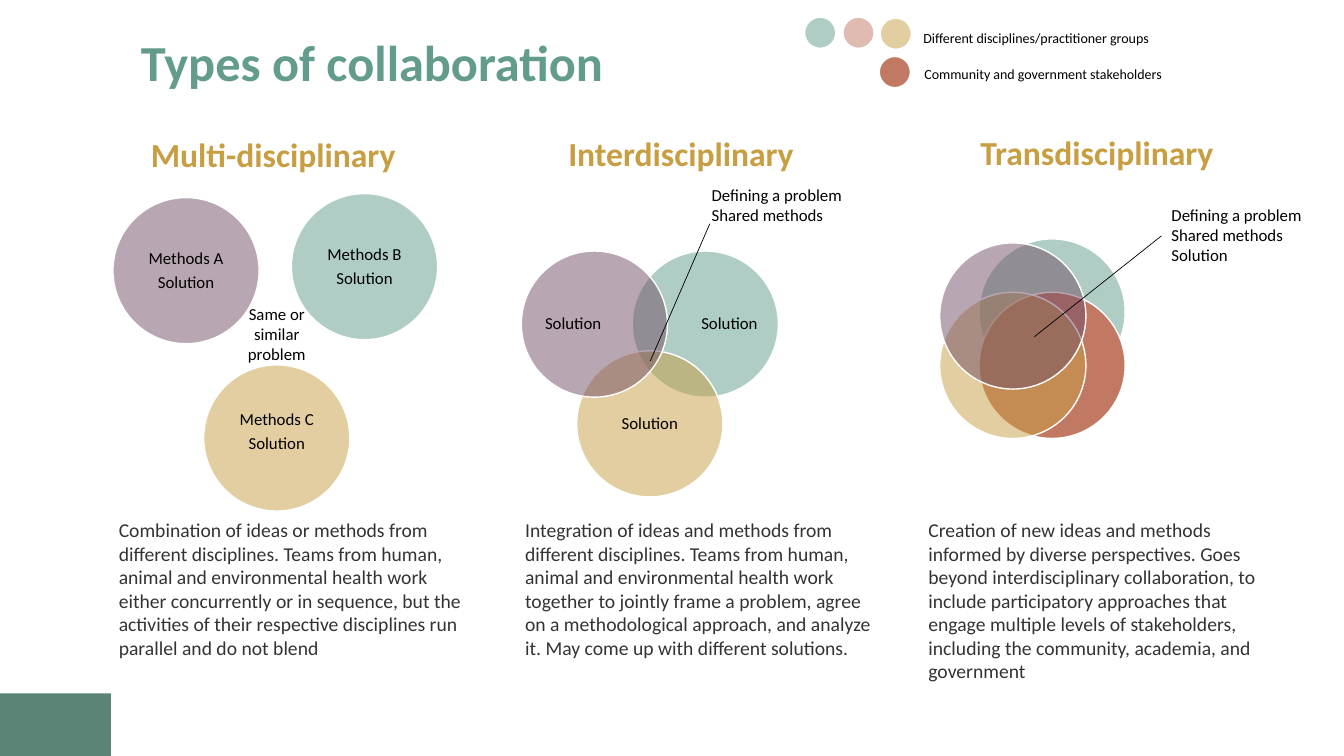
import pptx
import pptx.util
import pptx.dml.color
import pptx.enum.shapes
import pptx.enum.text
import pptx.oxml
import pptx.oxml.ns

Inches, Pt = pptx.util.Inches, pptx.util.Pt
SHAPE = pptx.enum.shapes.MSO_SHAPE
ANCHOR = pptx.enum.text.MSO_ANCHOR
ALIGN = pptx.enum.text.PP_ALIGN

FONT = "Calibri"
GREEN, GOLD, PURPLE, RUST = "639C8C", "C79E42", "724E66", "C27964"
BLACK, WHITE, GREY, CORNER = "000000", "FFFFFF", "333333", "5B8477"
DISC, DOT = 1.45, 0.31
BODY_TOP, BODY_WIDTH = 5.09, 3.74
EVEN = (0.08, 0.08, 0.08, 0.08)

TITLE = "Types of collaboration"

COLUMNS = [
    {
        "heading": ("Multi-disciplinary", 1.1, 0.88, 3.22),
        "discs": [
            (2.89, 1.92, GREEN, 50, ["Methods B", "Solution"], EVEN),
            (2.02, 3.62, GOLD, 50, ["Methods C", "Solution"], (0.08, 0.08, 0.08, 0.2)),
            (1.12, 1.96, PURPLE, 50, ["Methods A", "Solution"], EVEN),
        ],
        "note": (["Same or similar problem"], 2.17, 2.96, 1.15, 0.71, ALIGN.CENTER),
        "pointer": None,
        "body": (1.08, 1.51, "Combination of ideas or methods from different disciplines. "
                 "Teams from human, animal and environmental health work either concurrently "
                 "or in sequence, but the activities of their respective disciplines run "
                 "parallel and do not blend"),
    },
    {
        "heading": ("Interdisciplinary", 5.37, 0.87, 2.77),
        "discs": [
            (6.27, 2.49, GREEN, 50, ["Solution"], (0.48, 0, 0, 0)),
            (5.72, 3.48, GOLD, 50, ["Solution"], EVEN),
            (5.17, 2.49, PURPLE, 50, ["Solution"], (0, 0, 0.42, 0)),
        ],
        "note": (["Defining a problem", "Shared methods"], 6.96, 1.78, 1.51, 0.5, ALIGN.LEFT),
        "pointer": (6.45, 3.58, 7.04, 2.22),
        "body": (5.11, 1.51, "Integration of ideas and methods from different disciplines. "
                 "Teams from human, animal and environmental health work together to jointly "
                 "frame a problem, agree on a methodological approach, and analyze it. May "
                 "come up with different solutions."),
    },
    {
        "heading": ("Transdisciplinary", 8.68, 0.86, 4.4),
        "discs": [
            (9.71, 2.37, GREEN, 50, [], EVEN),
            (9.71, 2.9, RUST, 100, [], EVEN),
            (9.32, 2.9, GOLD, 50, [], EVEN),
            (9.32, 2.41, PURPLE, 50, [], EVEN),
        ],
        "note": (["Defining a problem", "Shared methods", "Solution"],
                 11.52, 1.98, 1.51, 0.71, ALIGN.LEFT),
        "pointer": (10.26, 3.34, 11.52, 2.34),
        "body": (9.11, 1.75, "Creation of new ideas and methods informed by diverse "
                 "perspectives. Goes beyond interdisciplinary collaboration, to include "
                 "participatory approaches that engage multiple levels of stakeholders, "
                 "including the community, academia, and government"),
    },
]

LEGEND_DOTS = [
    (7.98, 0.17, GREEN, 50),
    (8.36, 0.17, RUST, 50),
    (8.73, 0.18, GOLD, 50),
    (8.72, 0.56, RUST, 100),
]
LEGEND_LABELS = [
    ("Different disciplines/practitioner groups", 9.06, 0.24, 2.48),
    ("Community and government stakeholders", 9.07, 0.6, 2.6),
]

deck = pptx.Presentation()
deck.slide_width, deck.slide_height = Inches(13.33), Inches(7.5)
slide = deck.slides.add_slide(deck.slide_layouts[6])


def paint(color_format, hex_color):
    color_format.rgb = pptx.dml.color.RGBColor.from_string(hex_color)


def write(frame, lines, size, color, align=ALIGN.LEFT, bold=False, spacing=1.0, after=0):
    for index, line in enumerate(lines):
        paragraph = frame.paragraphs[0] if index == 0 else frame.add_paragraph()
        paragraph.text = line
        paragraph.alignment = align
        paragraph.line_spacing = spacing
        paragraph.space_after = Pt(after)
        paragraph.font.name = FONT
        paragraph.font.size = Pt(size)
        paragraph.font.bold = bold
        paint(paragraph.font.color, color)


def add_label(lines, left, top, width, height, size, color,
              anchor=ANCHOR.TOP, wrap=True, **style):
    frame = slide.shapes.add_textbox(
        Inches(left), Inches(top), Inches(width), Inches(height)).text_frame
    frame.word_wrap = wrap
    frame.vertical_anchor = anchor
    write(frame, lines, size, color, **style)


def add_filled(kind, left, top, width, height, color, opacity=100):
    shape = slide.shapes.add_shape(
        kind, Inches(left), Inches(top), Inches(width), Inches(height))
    shape.shadow.inherit = False
    shape.fill.solid()
    paint(shape.fill.fore_color, color)
    if opacity < 100:
        fill_color = shape.fill._xPr.find(".//" + pptx.oxml.ns.qn("a:srgbClr"))
        alpha = pptx.oxml.parse_xml(
            f'<a:alpha {pptx.oxml.ns.nsdecls("a")} val="{opacity * 1000}"/>')
        fill_color.append(alpha)
    return shape


def add_disc(left, top, size, color, opacity, lines=(), insets=EVEN):
    disc = add_filled(SHAPE.OVAL, left, top, size, size, color, opacity)
    paint(disc.line.color, WHITE)
    disc.line.width = Pt(1)
    if lines:
        frame = disc.text_frame
        frame.word_wrap = False
        frame.vertical_anchor = ANCHOR.MIDDLE
        (frame.margin_left, frame.margin_top,
         frame.margin_right, frame.margin_bottom) = map(Inches, insets)
        write(frame, lines, 12, BLACK, ALIGN.CENTER, spacing=0.9, after=4.2)


def add_pointer(*ends):
    pointer = slide.shapes.add_connector(
        pptx.enum.shapes.MSO_CONNECTOR.STRAIGHT, *map(Inches, ends))
    paint(pointer.line.color, BLACK)
    pointer.line.width = Pt(0.5)
    pointer._element.spPr.append(
        pptx.oxml.parse_xml(f'<a:effectLst {pptx.oxml.ns.nsdecls("a")}/>'))


corner = add_filled(SHAPE.RECTANGLE, 0, 6.88, 1.1, 0.62, CORNER)
corner.line.fill.background()
add_label([TITLE], 1.3, 0.29, 11.11, 0.71, 36, GREEN,
          anchor=ANCHOR.MIDDLE, bold=True, spacing=0.9)

for column in COLUMNS:
    heading, left, top, width = column["heading"]
    add_label([heading], left, top, width, 0.9, 24, GOLD,
              anchor=ANCHOR.BOTTOM, align=ALIGN.CENTER, bold=True, spacing=0.9)
    for left, top, color, opacity, lines, insets in column["discs"]:
        add_disc(left, top, DISC, color, opacity, lines, insets)
    body_left, body_height, body = column["body"]
    add_label([body], body_left, BODY_TOP, BODY_WIDTH, body_height, 14, GREY)
    *note, note_align = column["note"]
    add_label(*note, 12, BLACK, align=note_align)
    if column["pointer"]:
        add_pointer(*column["pointer"])

for left, top, color, opacity in LEGEND_DOTS:
    add_disc(left, top, DOT, color, opacity)
for label, left, top, width in LEGEND_LABELS:
    add_label([label], left, top, width, 0.27, 10, BLACK, wrap=False)

deck.save("out.pptx")
